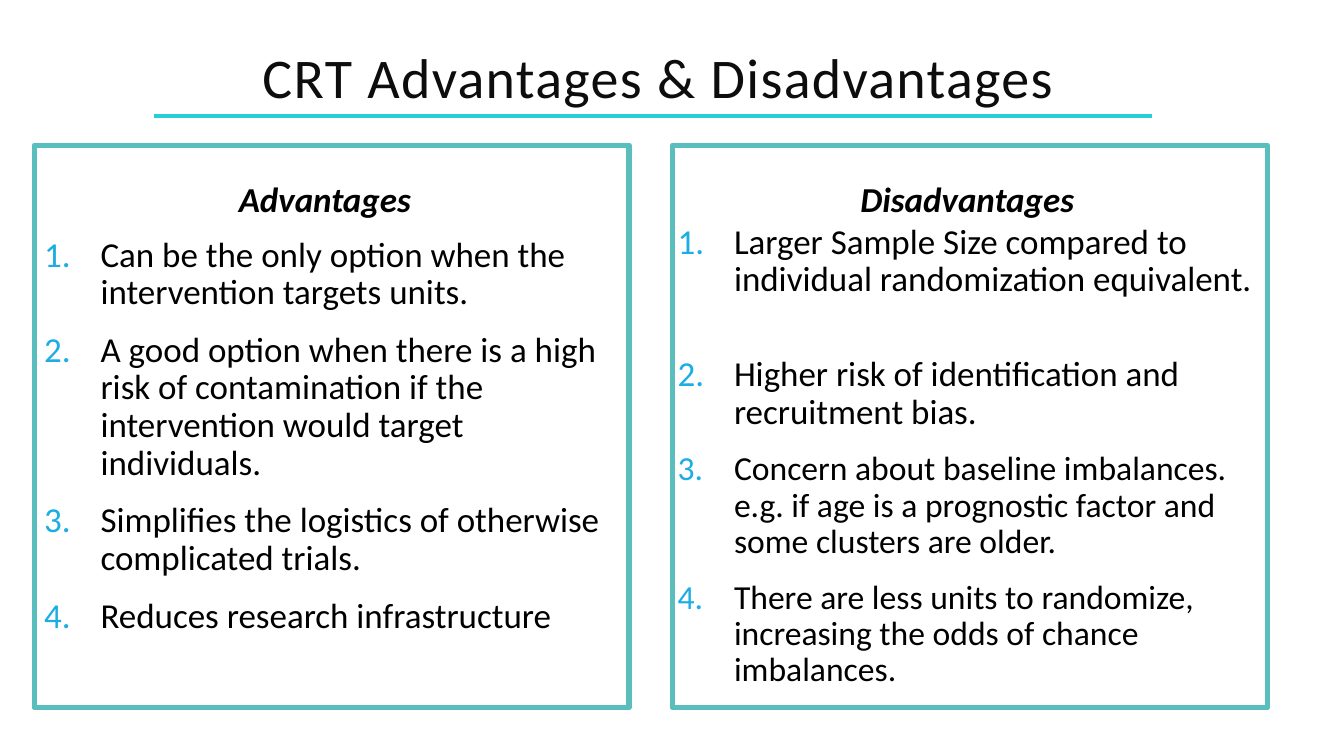
from dataclasses import dataclass

from lxml.etree import SubElement
from pptx import Presentation
from pptx.dml.color import RGBColor
from pptx.enum.shapes import MSO_CONNECTOR, MSO_SHAPE
from pptx.enum.text import MSO_ANCHOR, PP_ALIGN
from pptx.oxml.ns import qn
from pptx.util import Inches, Pt


@dataclass(frozen=True)
class Theme:
    font: str = "Calibri"
    title_color: str = "0D0D0D"
    text: str = "000000"
    panel: str = "FFFFFF"
    border: str = "59BEBD"
    rule: str = "27CED7"
    number: str = "1CADE4"
    title_size: int = 40
    body_size: int = 25
    small_size: int = 24
    border_width: float = 3.75
    rule_width: float = 3


def rgb(value):
    return RGBColor.from_string(value)


def write(p, text, font, size, color, bold=False, italic=False, tracking=None,
          align=PP_ALIGN.LEFT, leading=None, before=0, after=0):
    p.alignment = align
    p.line_spacing = leading
    p.space_before = Pt(before)
    p.space_after = Pt(after)
    r = p.add_run()
    r.text = text
    r.font.name = font
    r.font.size = Pt(size)
    r.font.color.rgb = rgb(color)
    r.font.bold = bold
    r.font.italic = italic
    if tracking:
        r.font._element.set("spc", str(tracking))


class Deck:
    COLS = ROWS = 100

    def __init__(self, theme):
        self.theme = theme
        self.prs = Presentation()
        self.prs.slide_width = Inches(13.33)
        self.prs.slide_height = Inches(7.5)
        self.s = self.prs.slides.add_slide(self.prs.slide_layouts[6])

    def x(self, cols):
        return round(self.prs.slide_width * cols / self.COLS)

    def y(self, rows):
        return round(self.prs.slide_height * rows / self.ROWS)

    def area(self, left, top, width, height):
        return self.x(left), self.y(top), self.x(width), self.y(height)

    def rule(self, left, right, row):
        line = self.s.shapes.add_connector(
            MSO_CONNECTOR.STRAIGHT, self.x(left), self.y(row), self.x(right), self.y(row))
        line.line.color.rgb = rgb(self.theme.rule)
        line.line.width = Pt(self.theme.rule_width)
        SubElement(line._element.spPr, qn("a:effectLst"))

    def panel(self, *area):
        sp = self.s.shapes.add_shape(MSO_SHAPE.RECTANGLE, *self.area(*area))
        sp.shadow.inherit = False
        sp.fill.solid()
        sp.fill.fore_color.rgb = rgb(self.theme.panel)
        sp.line.color.rgb = rgb(self.theme.border)
        sp.line.width = Pt(self.theme.border_width)
        return sp

    def box(self, *area):
        sp = self.s.shapes.add_textbox(*self.area(*area))
        sp.text_frame.word_wrap = True
        return sp

    def title(self, text, *area):
        tf = self.box(*area).text_frame
        tf.vertical_anchor = MSO_ANCHOR.MIDDLE
        write(tf.paragraphs[0], text, self.theme.font, self.theme.title_size,
              self.theme.title_color, tracking=100, align=PP_ALIGN.CENTER, leading=0.8)

    def heading(self, text, *area):
        write(self.box(*area).text_frame.paragraphs[0], text, self.theme.font,
              self.theme.body_size, self.theme.text, bold=True, italic=True)

    def numbered(self, sp, items):
        tf = sp.text_frame
        tf.vertical_anchor = MSO_ANCHOR.TOP
        for i, (text, size, after) in enumerate(items):
            p = tf.add_paragraph() if i else tf.paragraphs[0]
            pPr = p._p.get_or_add_pPr()
            pPr.set("marL", str(Inches(0.56)))
            pPr.set("indent", str(-Inches(0.56)))
            color = SubElement(pPr, qn("a:buClr"))
            SubElement(color, qn("a:srgbClr"), val=self.theme.number)
            SubElement(pPr, qn("a:buFont"), typeface="+mj-lt")
            SubElement(pPr, qn("a:buAutoNum"), type="arabicPeriod")
            write(p, text, self.theme.font, size, self.theme.text,
                  leading=0.9, before=12 if i else 0, after=after)


def main():
    theme = Theme()
    body, small = theme.body_size, theme.small_size
    advantages = [
        ("Can be the only option when the intervention targets units.", body, 2),
        ("A good option when there is a high risk of contamination if the "
         "intervention would target individuals.", body, 2),
        ("Simplifies the logistics of otherwise complicated trials.", body, 2),
        ("Reduces research infrastructure", body, 2),
    ]
    disadvantages = [
        ("Larger Sample Size compared to individual randomization equivalent.", body, 29),
        ("Higher risk of identification and recruitment bias.", body, 2),
        ("Concern about baseline imbalances. e.g. if age is a prognostic factor "
         "and some clusters are older.", small, 2),
        ("There are less units to randomize, increasing the odds of chance "
         "imbalances.", small, 2),
    ]
    left, right, width = 2.55, 50.04, 44.26
    deck = Deck(theme)
    deck.rule(11.48, 85.75, 15.33)
    deck.title("CRT Advantages & Disadvantages", 6.9, 0, 84.17, 21.87)
    panels = [deck.panel(col, 19.2, width, 74.4) for col in (left, right)]
    for text, col, span in (("Advantages", left, 15.3), ("Disadvantages", right, 17.78)):
        deck.heading(text, col + (width - span) / 2, 22.8, span, 6.93)
    deck.numbered(deck.box(left, 30.67, width, 60.67), advantages)
    tf = panels[1].text_frame
    tf.margin_left = tf.margin_right = tf.margin_bottom = Inches(0.05)
    tf.margin_top = Inches(0.78)
    deck.numbered(panels[1], disadvantages)
    deck.prs.save("out.pptx")


if __name__ == "__main__":
    main()
